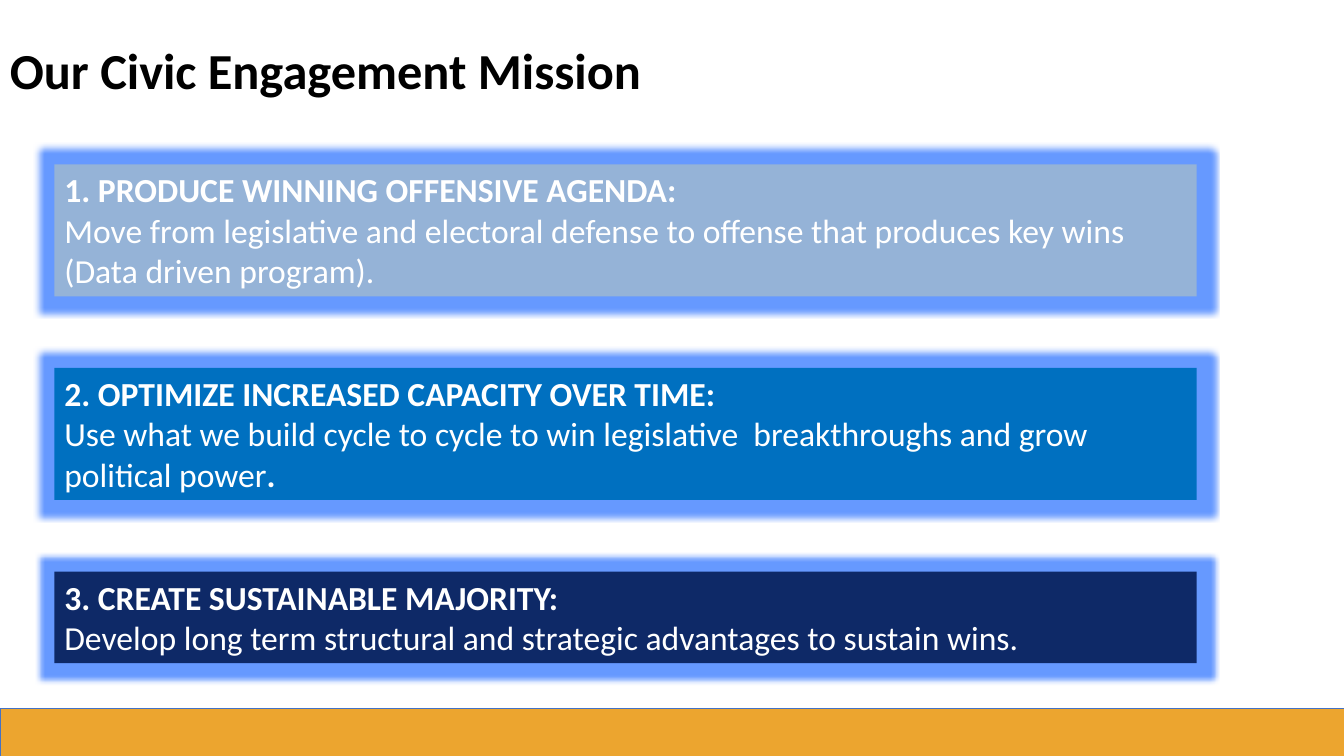
from dataclasses import dataclass

from lxml.etree import SubElement
from pptx import Presentation
from pptx.dml.color import RGBColor
from pptx.enum.shapes import MSO_SHAPE
from pptx.enum.text import MSO_ANCHOR, PP_ALIGN
from pptx.oxml.ns import qn
from pptx.shapes.autoshape import Shape
from pptx.slide import Slide
from pptx.text.text import TextFrame, _Paragraph
from pptx.util import Inches, Pt

FONT = "Calibri"
BLACK = RGBColor(0x00, 0x00, 0x00)
WHITE = RGBColor(0xFF, 0xFF, 0xFF)
LIGHT_BLUE = RGBColor(0x95, 0xB3, 0xD7)
BLUE = RGBColor(0x00, 0x70, 0xC0)
NAVY = RGBColor(0x0E, 0x29, 0x67)
GOLD = RGBColor(0xEC, 0xA5, 0x2F)
LINE_BLUE = RGBColor(0x44, 0x72, 0xC4)
GLOW_BLUE = RGBColor(0x66, 0x99, 0xFF)

SLIDE_WIDTH = 13.33
GOAL_TOP, GOAL_PITCH = 1.63, 2.02


@dataclass
class Goal:
    heading: str
    body: str
    fill: RGBColor
    height: float
    bold_end: str = ""


GOALS = [
    Goal("1. PRODUCE WINNING OFFENSIVE AGENDA:",
         "Move from legislative and electoral defense to offense that produces "
         "key wins (Data driven program).", LIGHT_BLUE, 1.31),
    Goal("2. OPTIMIZE INCREASED CAPACITY OVER TIME:",
         "Use what we build cycle to cycle to win legislative  breakthroughs "
         "and grow political power", BLUE, 1.31, bold_end="."),
    Goal("3. CREATE SUSTAINABLE MAJORITY:",
         "Develop long term structural and strategic advantages to sustain wins.",
         NAVY, 0.91),
]


def add_text(p: _Paragraph, text: str, *, size: float = 24,
             color: RGBColor = WHITE, bold: bool = False) -> None:
    p.alignment = PP_ALIGN.LEFT
    r = p.add_run()
    r.text = text
    r.font.name, r.font.size, r.font.bold = FONT, Pt(size), bold
    r.font.color.rgb = color


def set_frame(tf: TextFrame, anchor: MSO_ANCHOR) -> None:
    tf.word_wrap = True
    tf.vertical_anchor = anchor


def add_box(s: Slide, left: float, top: float, width: float, height: float,
            fill: RGBColor) -> Shape:
    sp = s.shapes.add_shape(MSO_SHAPE.RECTANGLE, Inches(left), Inches(top),
                            Inches(width), Inches(height))
    sp.shadow.inherit = False
    sp.fill.solid()
    sp.fill.fore_color.rgb = fill
    sp.line.fill.background()
    return sp


def add_glow(sp: Shape, color: RGBColor, radius: float) -> None:
    effects = sp.element.spPr.find(qn("a:effectLst"))
    glow = SubElement(effects, qn("a:glow"), rad=str(Pt(radius)))
    SubElement(glow, qn("a:srgbClr"), val=str(color))


def add_goal(s: Slide, goal: Goal, top: float) -> None:
    sp = add_box(s, 0.54, top, 11.33, goal.height, goal.fill)
    add_glow(sp, GLOW_BLUE, 8)
    tf = sp.text_frame
    set_frame(tf, MSO_ANCHOR.TOP)
    add_text(tf.paragraphs[0], goal.heading, bold=True)
    p = tf.add_paragraph()
    add_text(p, goal.body)
    if goal.bold_end:
        add_text(p, goal.bold_end, bold=True)


def main() -> None:
    prs = Presentation()
    prs.slide_width, prs.slide_height = Inches(SLIDE_WIDTH), Inches(7.5)
    s = prs.slides.add_slide(prs.slide_layouts[6])

    # Title
    title = s.shapes.add_textbox(0, 0, Inches(SLIDE_WIDTH), Inches(1.45))
    set_frame(title.text_frame, MSO_ANCHOR.MIDDLE)
    p = title.text_frame.paragraphs[0]
    p.line_spacing = 0.9
    add_text(p, "Our Civic Engagement Mission", size=36, color=BLACK, bold=True)

    # Goals
    for i, goal in enumerate(GOALS):
        add_goal(s, goal, GOAL_TOP + i * GOAL_PITCH)

    # Footer band
    band = add_box(s, 0, 7.03, SLIDE_WIDTH, 0.47, GOLD)
    band.line.color.rgb = LINE_BLUE
    band.line.width = Pt(0.5)

    prs.save("out.pptx")


if __name__ == "__main__":
    main()
